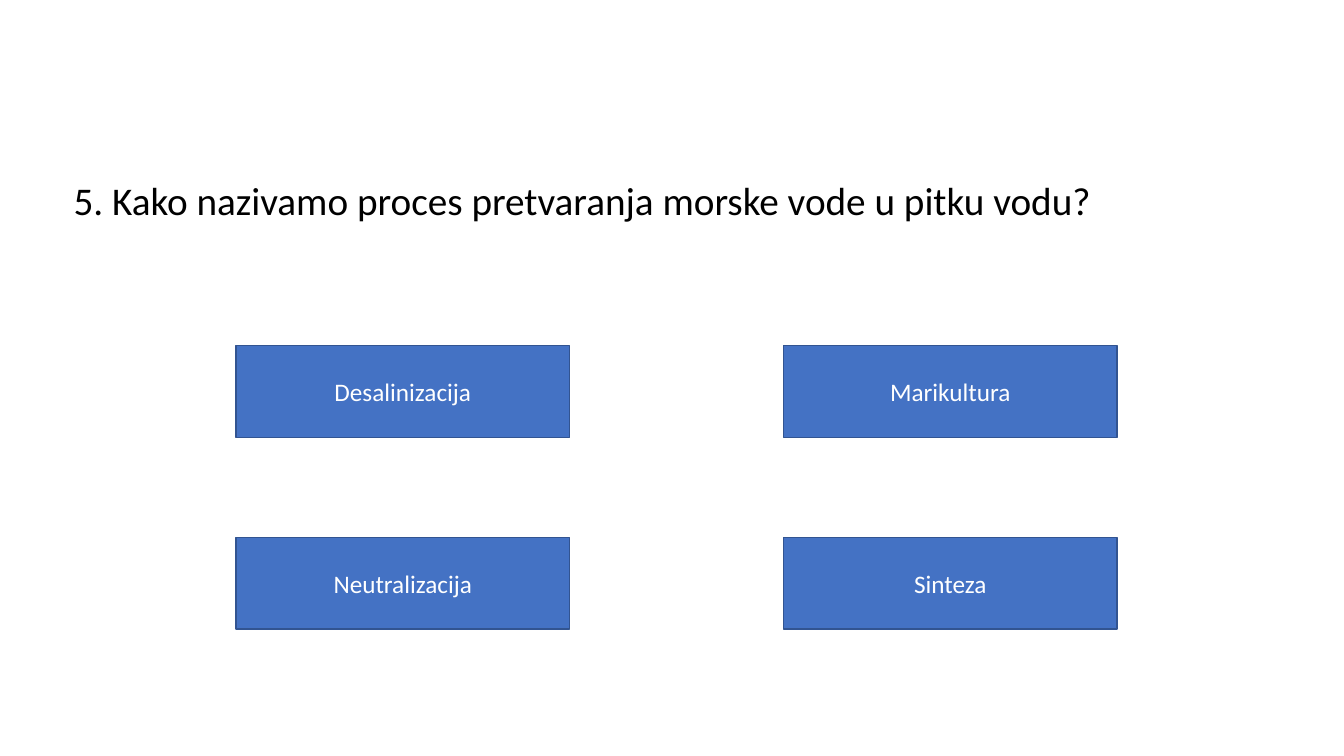
"""Builds a quiz slide with one question and four answer boxes."""
from pptx import Presentation
from pptx.dml.color import RGBColor
from pptx.enum.shapes import MSO_SHAPE
from pptx.enum.text import MSO_ANCHOR, MSO_AUTO_SIZE, PP_ALIGN
from pptx.util import Inches, Pt

COLORS = {
    "question": "000000",
    "answer": "FFFFFF",
    "box": "4472C4",
    "border": "325491",
}
QUESTION = "5. Kako nazivamo proces pretvaranja morske vode u pitku vodu?"
ANSWERS = [
    ["Desalinizacija", "Marikultura"],
    ["Neutralizacija", "Sinteza"],
]
GRID_LEFT, GRID_TOP = 2.34, 3.43
COLUMN_STEP, ROW_STEP = 5.43, 1.9
BOX_WIDTH, BOX_HEIGHT = 3.31, 0.91


def color(name):
    return RGBColor.from_string(COLORS[name])


def write(shape, text, *, size, ink, align, anchor):
    frame = shape.text_frame
    frame.text = text
    frame.word_wrap = True
    frame.auto_size = MSO_AUTO_SIZE.NONE
    frame.vertical_anchor = anchor
    paragraph = frame.paragraphs[0]
    paragraph.alignment = align
    font = paragraph.runs[0].font
    font.name = "Calibri"
    font.size = Pt(size)
    font.color.rgb = color(ink)


def place_question(slide, text):
    question = slide.shapes.title
    question.left, question.top = Inches(0.63), Inches(1.7)
    question.width, question.height = Inches(11.81), Inches(0.57)
    write(question, text, size=28, ink="question",
          align=PP_ALIGN.LEFT, anchor=MSO_ANCHOR.TOP)


def add_answer(slide, text, left, top):
    answer = slide.shapes.add_shape(
        MSO_SHAPE.RECTANGLE, Inches(left), Inches(top),
        Inches(BOX_WIDTH), Inches(BOX_HEIGHT))
    answer.shadow.inherit = False
    answer.fill.solid()
    answer.fill.fore_color.rgb = color("box")
    answer.line.color.rgb = color("border")
    answer.line.width = Pt(1)
    write(answer, text, size=18, ink="answer",
          align=PP_ALIGN.CENTER, anchor=MSO_ANCHOR.MIDDLE)


def main():
    deck = Presentation()
    deck.slide_width, deck.slide_height = Inches(13.33), Inches(7.5)
    title_only = deck.slide_layouts.get_by_name("Title Only")
    slide = deck.slides.add_slide(title_only)
    place_question(slide, QUESTION)
    for row, answers in enumerate(ANSWERS):
        for column, answer in enumerate(answers):
            add_answer(slide, answer, GRID_LEFT + column * COLUMN_STEP,
                       GRID_TOP + row * ROW_STEP)
    deck.save("out.pptx")


if __name__ == "__main__":
    main()
